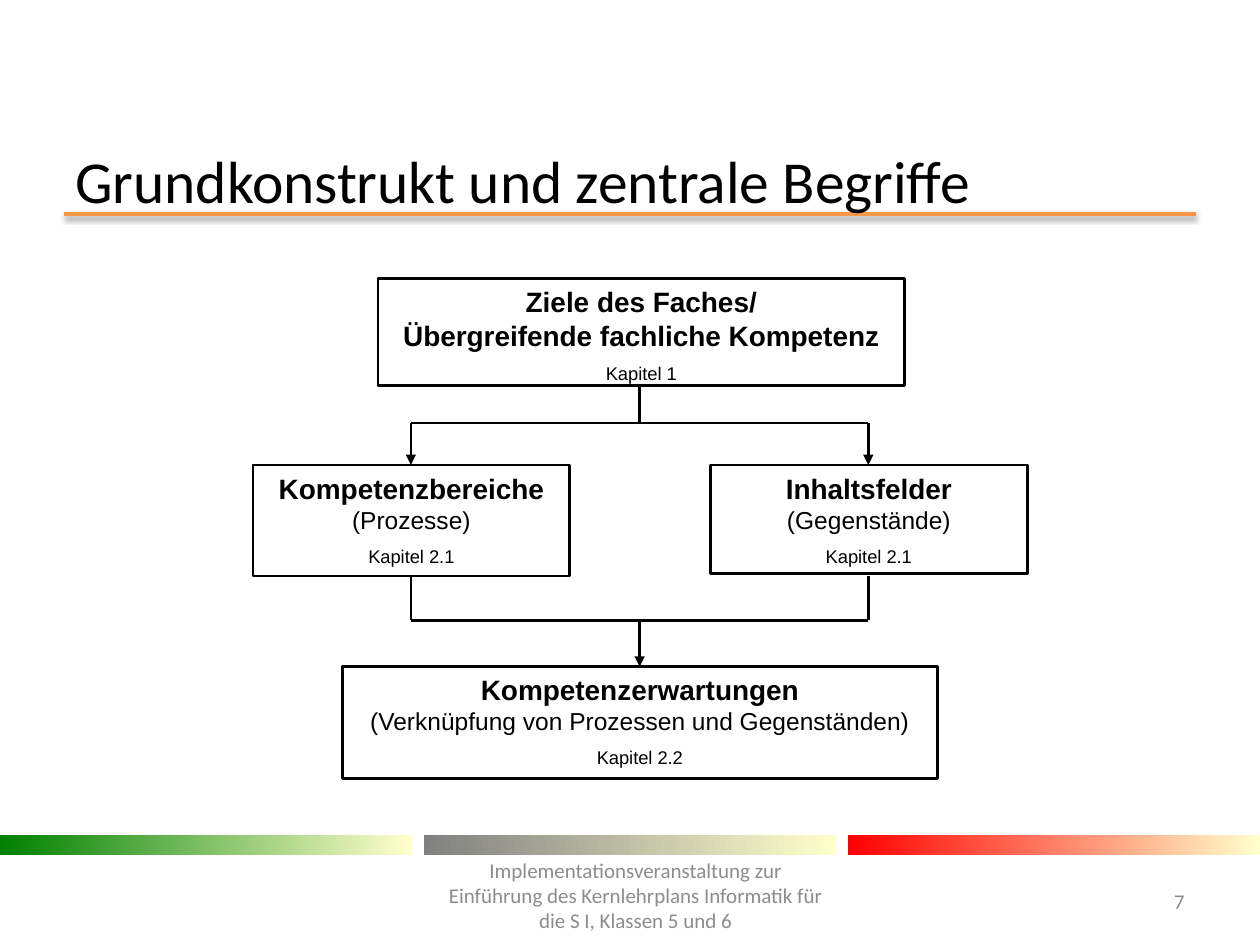
from lxml import etree
from pptx import Presentation
from pptx.dml.color import RGBColor
from pptx.enum.shapes import MSO_CONNECTOR, MSO_SHAPE
from pptx.enum.text import MSO_ANCHOR, PP_ALIGN
from pptx.oxml.ns import qn
from pptx.util import Pt

COLORS = {
    "ink": "000000", "paper": "FFFFFF", "muted": "8C8C8C", "accent": "F79646",
    "green": "008000", "gray": "808080", "red": "FF0000", "cream": "FFFFCC",
}
HEADING = {"size": Pt(16), "bold": True}
DETAIL = {"size": Pt(14), "bold": False}
CHAPTER = {"size": Pt(10.5), "bold": False}


def color(name):
    return RGBColor.from_string(COLORS[name])


class SlideBuilder:
    """Holds the slide and the shared style of its elements."""

    line_width = 1.5
    body_font = "Arial"
    frame_font = "Calibri"

    def __init__(self, slide):
        self.slide = slide

    def add_text(self, paragraph, text, font_color, formats):
        run = paragraph.add_run()
        run.text = text
        run.font.color.rgb = color(font_color)
        for name, value in formats.items():
            setattr(run.font, name, value)

    def label(self, bounds, text, size, font_color="muted", align=PP_ALIGN.LEFT):
        frame = self.slide.shapes.add_textbox(*map(Pt, bounds)).text_frame
        frame.word_wrap = True
        frame.vertical_anchor = MSO_ANCHOR.MIDDLE
        frame.paragraphs[0].alignment = align
        self.add_text(frame.paragraphs[0], text, font_color,
                      {"name": self.frame_font, "size": Pt(size)})

    def rectangle(self, bounds):
        shape = self.slide.shapes.add_shape(MSO_SHAPE.RECTANGLE, *map(Pt, bounds))
        shape.shadow.inherit = False
        return shape

    def gradient_bar(self, bounds, start):
        bar = self.rectangle(bounds)
        bar.line.fill.background()
        bar.fill.gradient()
        bar.fill.gradient_angle = 0
        for stop, name in zip(bar.fill.gradient_stops, (start, "cream")):
            stop.color.rgb = color(name)

    def box(self, bounds, lines):
        box = self.rectangle(bounds)
        box.fill.solid()
        box.fill.fore_color.rgb = color("paper")
        box.line.color.rgb = color("ink")
        box.line.width = Pt(self.line_width)
        frame = box.text_frame
        frame.word_wrap = True
        frame.vertical_anchor = MSO_ANCHOR.TOP
        for index, (text, formats) in enumerate(lines):
            paragraph = frame.add_paragraph() if index else frame.paragraphs[0]
            paragraph.alignment = PP_ALIGN.CENTER
            if formats is CHAPTER:
                paragraph.space_before = Pt(6)
            self.add_text(paragraph, text, "ink", {"name": self.body_font, **formats})

    def line(self, start, end, stroke="ink", width=line_width, arrow=False, shadow=False):
        connector = self.slide.shapes.add_connector(
            MSO_CONNECTOR.STRAIGHT, *map(Pt, (*start, *end)))
        connector.line.color.rgb = color(stroke)
        connector.line.width = Pt(width)
        properties = connector._element.spPr
        if arrow:
            etree.SubElement(properties.find(qn("a:ln")), qn("a:tailEnd"), type="triangle")
        effects = etree.SubElement(properties, qn("a:effectLst"))
        if shadow:
            outer = etree.SubElement(
                effects, qn("a:outerShdw"), blurRad=str(Pt(3.1)), dist=str(Pt(1.6)),
                dir="5400000", rotWithShape="0")
            tint = etree.SubElement(outer, qn("a:srgbClr"), val=COLORS["ink"])
            etree.SubElement(tint, qn("a:alpha"), val="38000")


def main():
    presentation = Presentation()
    presentation.slide_width, presentation.slide_height = Pt(720), Pt(540)
    builder = SlideBuilder(presentation.slides.add_slide(presentation.slide_layouts[6]))

    # Title with its rule
    builder.line((36.7, 122.4), (683.3, 122.4), "accent", 2, shadow=True)
    builder.label((36, 88.5, 648, 28), "Grundkonstrukt und zentrale Begriffe", 34, "ink")

    # Footer bars, footer text and page number
    for index, start in enumerate(("green", "gray", "red")):
        builder.gradient_bar((index * 242.3, 477.3, 235.4, 11.5), start)
    builder.label((247, 491, 232.5, 41), "Implementationsveranstaltung zur Einführung des "
                  "Kernlehrplans Informatik für die S I, Klassen 5 und 6", 12,
                  align=PP_ALIGN.CENTER)
    builder.label((638, 500.5, 46, 29), "7", 12, align=PP_ALIGN.RIGHT)

    # Concept boxes
    left, center, right = 234.8, 365.5, 496.2
    goals_top, areas_top, outcome_top = 159, 265.7, 381
    builder.box((216, goals_top, 301, 61.3), [
        ("Ziele des Faches/", HEADING),
        ("Übergreifende fachliche Kompetenz", HEADING),
        ("Kapitel 1", CHAPTER)])
    for axis, height, area, detail in (
            (left, 63.4, "Kompetenzbereiche", "(Prozesse)"),
            (right, 62, "Inhaltsfelder", "(Gegenstände)")):
        builder.box((axis - 90.2, areas_top, 181, height), [
            (area, HEADING), (detail, DETAIL), ("Kapitel 2.1", CHAPTER)])
    builder.box((195.7, outcome_top, 340, 64), [
        ("Kompetenzerwartungen", HEADING),
        ("(Verknüpfung von Prozessen und Gegenständen)", DETAIL),
        ("Kapitel 2.2", CHAPTER)])

    # Branch from the goals to both areas, then merge into the outcome
    split, merge = 241.8, 354.5
    builder.line((center, goals_top + 61.3), (center, split))
    for axis in (left, right):
        builder.line((center, split), (axis, split))
        builder.line((axis, split), (axis, areas_top), arrow=True)
        builder.line((axis, areas_top + 63.4), (axis, merge))
        builder.line((axis, merge), (center, merge))
    builder.line((center, merge), (center, outcome_top), arrow=True)

    presentation.save("out.pptx")


if __name__ == "__main__":
    main()
